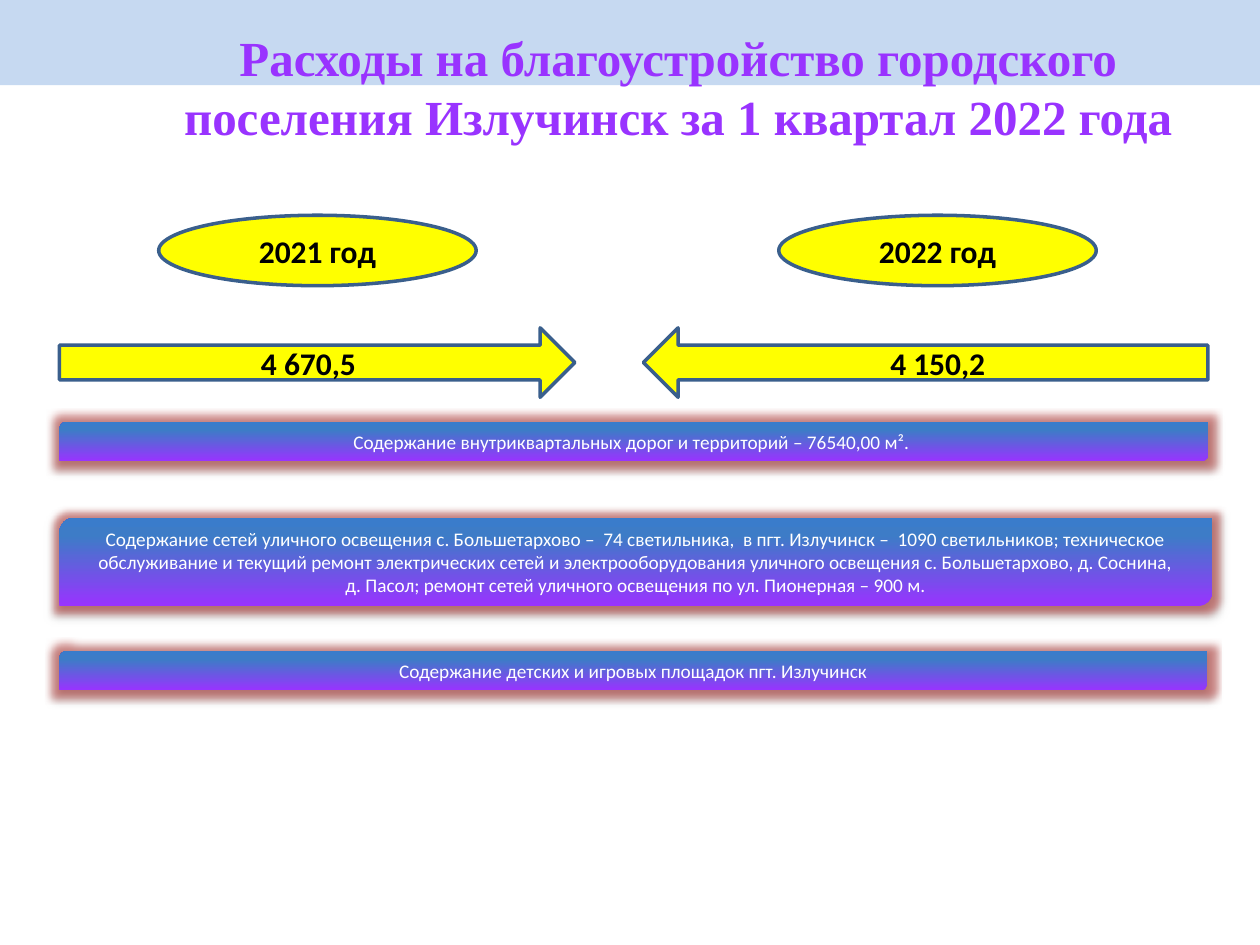
from lxml import etree
from pptx import Presentation
from pptx.dml.color import RGBColor
from pptx.enum.shapes import MSO_SHAPE as Shape
from pptx.enum.text import MSO_ANCHOR as Anchor, PP_ALIGN as Align
from pptx.oxml import parse_xml
from pptx.util import Cm, Pt

NS = 'xmlns:a="http://schemas.openxmlformats.org/drawingml/2006/main"'
YELLOW, NAVY, PURPLE = "FFFF00", "3A5F8C", "9933FF"

TITLE = "Расходы на благоустройство городского поселения Излучинск за 1 квартал 2022 года"

# kind, left, top, width, height (cm), text
FIGURES = [
    (Shape.RIGHT_ARROW, 1.2, 6.61, 10.39, 1.4, "4 670,5"),
    (Shape.LEFT_ARROW, 12.97, 6.61, 11.38, 1.4, " 4 150,2"),
    (Shape.OVAL, 3.2, 4.34, 6.4, 1.42, "2021 год"),
    (Shape.OVAL, 15.7, 4.34, 6.4, 1.42, "2022 год"),
]

# top, width, height (cm), text
WORKS = [
    (8.51, 23.16, 0.79, "Содержание внутриквартальных дорог и территорий – 76540,00 м². "),
    (10.44, 23.24, 1.78,
     "Содержание сетей уличного освещения с. Большетархово –  74 светильника,  "
     "в пгт. Излучинск –  1090 светильников; техническое обслуживание и текущий ремонт "
     "электрических сетей и электрооборудования уличного освещения с. Большетархово, "
     "д. Соснина,\vд. Пасол; ремонт сетей уличного освещения по ул. Пионерная – 900 м."),
    (13.13, 23.14, 0.79, "Содержание детских и игровых площадок пгт. Излучинск"),
]
WORKS_LEFT = 1.2

GRADIENT_STOPS = [(0, PURPLE), (80, "3D7CC7"), (100, "3A7CCB")]
EFFECTS = f"""<a:effectLst {NS}>
  <a:glow rad="101600"><a:srgbClr val="C0504D"><a:alpha val="60000"/></a:srgbClr></a:glow>
  <a:outerShdw blurRad="39370" dist="22860" dir="5400000" rotWithShape="0">
    <a:srgbClr val="000000"><a:alpha val="35000"/></a:srgbClr></a:outerShdw>
</a:effectLst>"""


def rgb(value):
    return RGBColor.from_string(value)


def write(shape, text, color, **font_values):
    frame = shape.text_frame
    frame.word_wrap = True
    frame.vertical_anchor = Anchor.MIDDLE
    para = frame.paragraphs[0]
    para.text = text
    para.alignment = Align.CENTER
    for span in para.runs:
        for name, value in font_values.items():
            setattr(span.font, name, value)
        span.font.color.rgb = rgb(color)
    return para


def add_figure(slide, kind, left, top, width, height, fill, line=None):
    shape = slide.shapes.add_shape(kind, *map(Cm, (left, top, width, height)))
    shape.shadow.inherit = False
    shape.fill.solid()
    shape.fill.fore_color.rgb = rgb(fill)
    if line:
        shape.line.color.rgb = rgb(line)
        shape.line.width = Pt(2)
    else:
        shape.line.fill.background()
    return shape


def apply_glowing_gradient(shape):
    properties = shape.fill._xPr
    stops = "".join(f'<a:gs pos="{place * 1000}"><a:srgbClr val="{color}"/></a:gs>'
                    for place, color in GRADIENT_STOPS)
    gradient = parse_xml(f'<a:gradFill {NS} rotWithShape="1"><a:gsLst>{stops}</a:gsLst>'
                         '<a:lin ang="16200000" scaled="0"/></a:gradFill>')
    for tag, new in (("solidFill", gradient), ("effectLst", parse_xml(EFFECTS))):
        old = next(child for child in properties if etree.QName(child).localname == tag)
        properties.replace(old, new)


def add_title(slide):
    title = slide.shapes.title
    place = dict(left=2.24, top=0.36, width=22.86, height=3.18)
    for name, value in place.items():
        setattr(title, name, Cm(value))
    para = write(title, TITLE, PURPLE, name="Times New Roman", size=Pt(28), bold=True)
    para.line_spacing = Pt(33.7)
    title.text_frame.vertical_anchor = Anchor.TOP
    title.text_frame.margin_top = Cm(0.19)
    outline = parse_xml(f'<a:ln {NS} w="10541"><a:solidFill><a:srgbClr val="467AB8"/>'
                        '</a:solidFill></a:ln>')
    para.runs[0].font._element.insert(0, outline)


def main():
    deck = Presentation()
    deck.slide_width, deck.slide_height = Cm(25.4), Cm(19.05)
    slide = deck.slides.add_slide(deck.slide_layouts[5])

    band = add_figure(slide, Shape.RECTANGLE, 0, 0, 25.4, 1.72, "C6D9F1")
    slide.shapes.title._element.addprevious(band._element)
    add_title(slide)

    for *place, text in FIGURES:
        shape = add_figure(slide, *place, YELLOW, NAVY)
        write(shape, text, "000000", name="Calibri", size=Pt(18), bold=True)

    for top, width, height, text in WORKS:
        shape = add_figure(slide, Shape.ROUND_2_DIAG_RECTANGLE,
                           WORKS_LEFT, top, width, height, PURPLE)
        apply_glowing_gradient(shape)
        write(shape, text, "FFFFFF", name="Calibri", size=Pt(11))

    deck.save("out.pptx")


if __name__ == "__main__":
    main()
